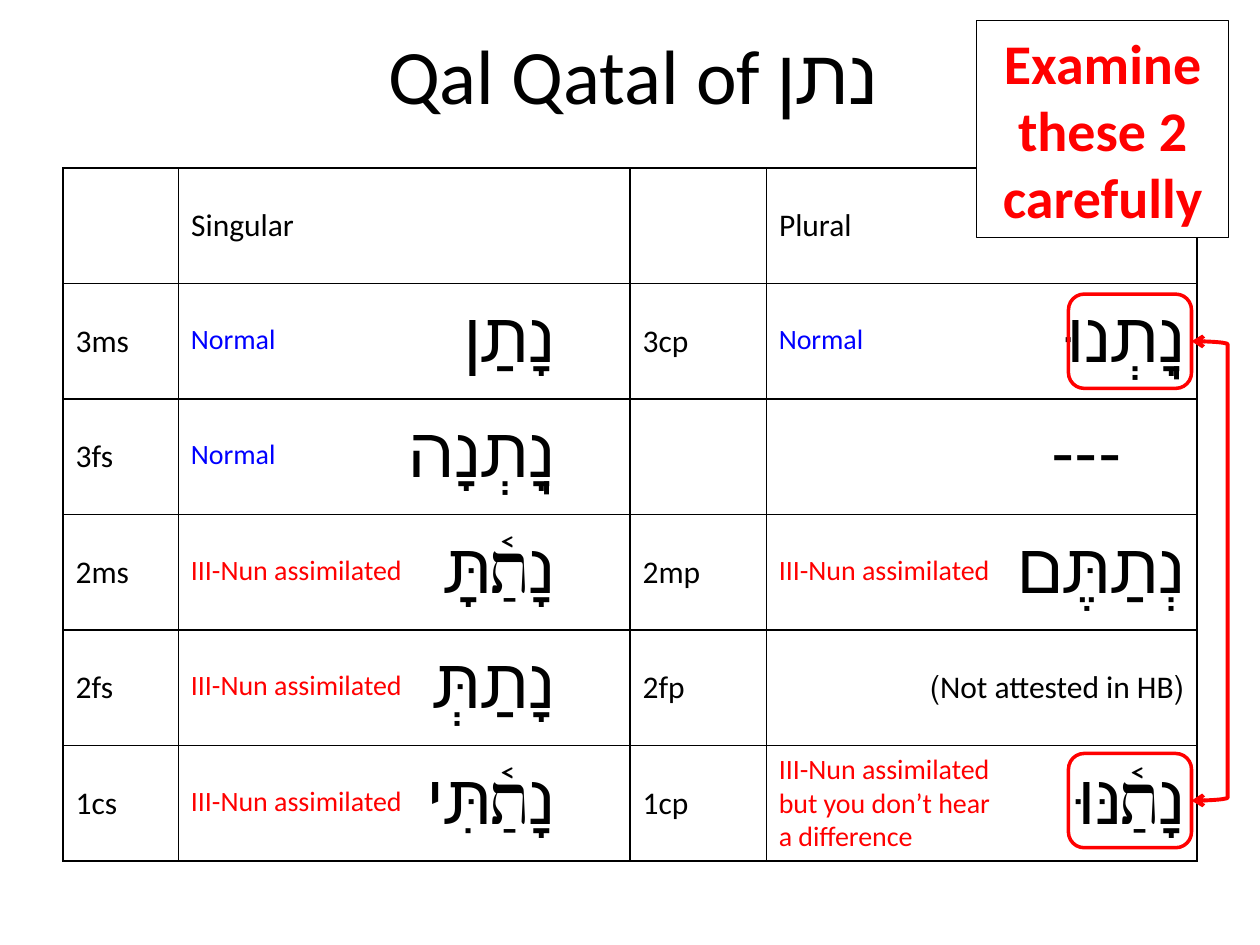
from lxml import etree
from pptx import Presentation
from pptx.dml.color import RGBColor
from pptx.enum.shapes import MSO_SHAPE
from pptx.enum.text import MSO_ANCHOR, MSO_AUTO_SIZE, PP_ALIGN
from pptx.oxml.ns import qn
from pptx.util import Cm, Pt

CENTER, RIGHT, MIDDLE = PP_ALIGN.CENTER, PP_ALIGN.RIGHT, MSO_ANCHOR.MIDDLE
GROW = MSO_AUTO_SIZE.SHAPE_TO_FIT_TEXT
RECT, ROUND, BRACKET = MSO_SHAPE.RECTANGLE, MSO_SHAPE.ROUNDED_RECTANGLE, MSO_SHAPE.RIGHT_BRACKET
BLACK, RED, BLUE, WHITE = "000000", "FF0000", "0000FF", "FFFFFF"
LATIN, HEBREW = "Calibri", "Arial"

FORMS = [
    ["", "Singular", "", "Plural"],
    ["3ms", "\tנָתַן", "3cp", "נָֽתְנוּ"],
    ["3fs", "\tנָֽתְנָה", "", "\t---"],
    ["2ms", "\tנָתַ֫תָּ", "2mp", "נְתַתֶּם"],
    ["2fs", "\tנָתַתְּ", "2fp", "(Not attested in HB)"],
    ["1cs", "\tנָתַ֫תִּי", "1cp", "נָתַ֫נּוּ"],
]
NORMAL, NUN = ["Normal"], ["III-Nun assimilated"]
NOTES = [
    (3, 1, NUN, RED), (4, 1, NUN, RED), (5, 1, NUN, RED),
    (1, 1, NORMAL, BLUE), (2, 1, NORMAL, BLUE), (1, 3, NORMAL, BLUE),
    (3, 3, NUN, RED),
    (5, 3, NUN + ["but you don’t hear a difference"], RED),
]

LEFT, TOP, ROW_H = 1.27, 3.39, 13.97 / 6
COL_W = [2.33, 9.1, 2.75, 8.68]
BOX_X, BOX_W, BOX_H = 21.54, 2.48, 1.9
BOX_TOPS = [5.93, 15.19]


def rgb(color):
    return RGBColor.from_string(color)


def add_run(p, text, size, font=LATIN, color=BLACK, bold=False):
    r = p.add_run()
    r.text = text
    r.font.size, r.font.name, r.font.bold = Pt(size), font, bold
    r.font.color.rgb = rgb(color)


def set_rtl(p):
    p.alignment = RIGHT
    pPr = p._p.get_or_add_pPr()
    pPr.set("rtl", "1")
    tabs = etree.SubElement(pPr, qn("a:tabLst"))
    etree.SubElement(tabs, qn("a:tab"), pos=str(Cm(1.27)), algn="r")


def set_borders(cell):
    tcPr = cell._tc.get_or_add_tcPr()
    for i, side in enumerate(["lnL", "lnR", "lnT", "lnB"]):
        ln = etree.Element(qn("a:" + side), w=str(Pt(1)))
        fill = etree.SubElement(ln, qn("a:solidFill"))
        etree.SubElement(fill, qn("a:srgbClr"), val=BLACK)
        tcPr.insert(i, ln)


def add_outline(s, kind, x, y, w, h, color, width):
    sp = s.shapes.add_shape(kind, Cm(x), Cm(y), Cm(w), Cm(h))
    sp.shadow.inherit = False
    sp.fill.background()
    sp.line.color.rgb = rgb(color)
    sp.line.width = Pt(width)
    return sp


def add_title(s):
    title = s.shapes.title
    title.left, title.top, title.width, title.height = Cm(1.32), Cm(0), Cm(22.86), Cm(2.97)
    tf = title.text_frame
    tf.vertical_anchor = MIDDLE
    p = tf.paragraphs[0]
    p.alignment = CENTER
    add_run(p, "Qal Qatal of ", 44)
    add_run(p, "נתן", 44, HEBREW)


def add_paradigm(s):
    table = s.shapes.add_table(len(FORMS), len(COL_W), Cm(LEFT), Cm(TOP),
                               Cm(sum(COL_W)), Cm(ROW_H * len(FORMS))).table
    table.first_row = table.horz_banding = False
    for col, width in zip(table.columns, COL_W):
        col.width = Cm(width)
    for i, row in enumerate(FORMS):
        table.rows[i].height = Cm(ROW_H)
        for j, text in enumerate(row):
            cell = table.cell(i, j)
            cell.vertical_anchor = MIDDLE
            cell.fill.background()
            set_borders(cell)
            p = cell.text_frame.paragraphs[0]
            is_form = i > 0 and j % 2 == 1
            if is_form:
                set_rtl(p)
            if is_form and not text.startswith("("):
                add_run(p, text, 40, HEBREW)
            elif text:
                add_run(p, text, 18)


def add_notes(s):
    for row, col, lines, color in NOTES:
        single = len(lines) == 1
        x = LEFT + sum(COL_W[:col])
        y = TOP + ROW_H * row + (0.63 if single else 0)
        sp = s.shapes.add_textbox(Cm(x), Cm(y), Cm(5.08), Cm(0.94 if single else 2.31))
        tf = sp.text_frame
        tf.word_wrap, tf.auto_size = True, GROW
        for k, line in enumerate(lines):
            p = tf.add_paragraph() if k else tf.paragraphs[0]
            add_run(p, line, 16, color=color)


def add_callout(s):
    first, last = BOX_TOPS
    for y in BOX_TOPS:
        add_outline(s, ROUND, BOX_X, y, BOX_W, BOX_H, RED, 2)
    bracket = add_outline(s, BRACKET, BOX_X + BOX_W, first + BOX_H / 2,
                          0.73, last - first, RED, 2.25)
    ln = bracket.line._get_or_add_ln()
    for end in ["a:headEnd", "a:tailEnd"]:
        etree.SubElement(ln, qn(end), type="arrow")
    sp = add_outline(s, RECT, 19.69, 0.42, 5.08, 4.37, BLACK, 0.75)
    sp.fill.solid()
    sp.fill.fore_color.rgb = rgb(WHITE)
    tf = sp.text_frame
    tf.word_wrap, tf.auto_size = True, GROW
    p = tf.paragraphs[0]
    p.alignment = CENTER
    add_run(p, "Examine these 2 carefully", 32, color=RED, bold=True)


def main():
    prs = Presentation()
    prs.slide_width, prs.slide_height = Cm(25.4), Cm(19.05)
    s = prs.slides.add_slide(prs.slide_layouts[5])
    add_title(s)
    add_paradigm(s)
    add_notes(s)
    add_callout(s)
    prs.save("out.pptx")


if __name__ == "__main__":
    main()
